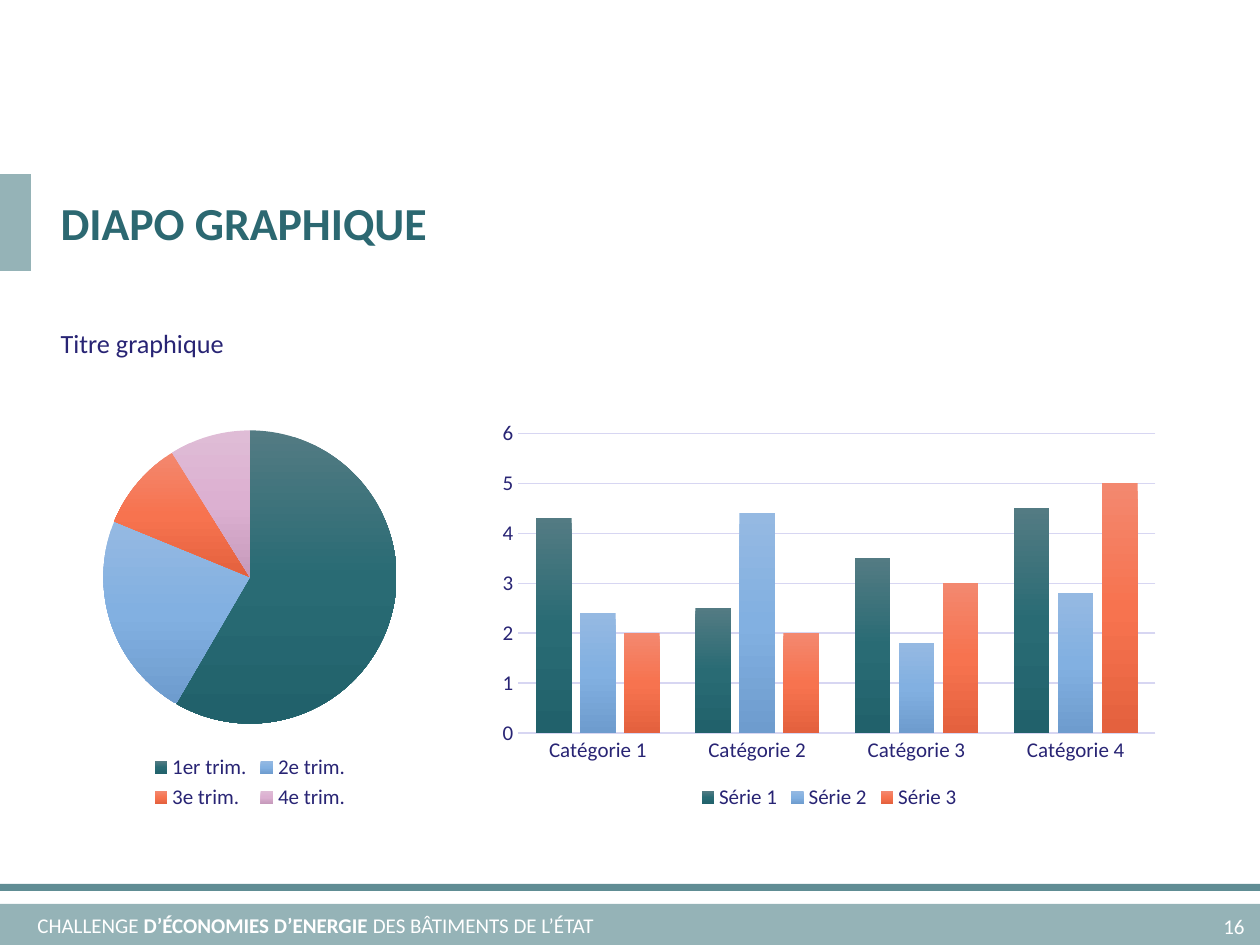
import copy
import pptx
import pptx.chart.data
import pptx.dml.color
import pptx.enum.chart
import pptx.enum.shapes
import pptx.enum.text
import pptx.oxml
import pptx.oxml.ns
import pptx.util

theme = {
    "font": "Calibri",
    "teal": "2C6871", "navy": "282474", "white": "FFFFFF", "grid": "D7D6F2",
    "title": 26.2, "body": 15, "small": 12,
    "grads": [
        ("537B83", "296B74", "21616B"),
        ("95B9E2", "82B0E1", "6E9CCE"),
        ("F3886F", "F7734F", "E4613E"),
        ("DFBCD6", "DCB0D1", "C69ABB"),
    ],
}
scale = pptx.util.Inches(1) / 126
rgb = pptx.dml.color.RGBColor.from_string
qn = pptx.oxml.ns.qn
kinds = pptx.enum.chart.XL_CHART_TYPE


def style(font, size, color, bold=False):
    font.name = theme["font"]
    font.size = pptx.util.Pt(theme[size])
    font.color.rgb = rgb(theme[color])
    font.bold = bold


def shade(form, tones):
    form.fill.gradient()
    form.fill.gradient_angle = 270
    stops = form._element.get_or_add_spPr().find(".//" + qn("a:gsLst"))
    stops.append(copy.deepcopy(stops[0]))
    for stop, tone, place in zip(form.fill.gradient_stops, tones, (0, 0.5, 1)):
        stop.color.rgb = rgb(tone)
        stop.position = place


deck = pptx.Presentation()
deck.slide_width = pptx.util.Inches(10)
deck.slide_height = pptx.util.Inches(7.5)
slide = deck.slides.add_slide(deck.slide_layouts[1])
shapes = slide.shapes

bars = [
    ((0, 904, 1260, 41), 50),
    ((0, 884, 1260, 7), 75),
    ((-1, 174, 32, 97), 50),
]
for box, alpha in bars:
    bar = shapes.add_shape(pptx.enum.shapes.MSO_SHAPE.RECTANGLE,
                           *[round(n * scale) for n in box])
    bar.shadow.inherit = False
    bar.line.fill.background()
    bar.fill.solid()
    bar.fill.fore_color.rgb = rgb(theme["teal"])
    tint = bar.fill._xPr.find(".//" + qn("a:srgbClr"))
    tint.append(pptx.oxml.parse_xml(
        f'<a:alpha {pptx.oxml.ns.nsdecls("a")} val="{alpha * 1000}"/>'))

title, body = shapes.title, slide.placeholders[1]
foot, page = [shapes.add_textbox(0, 0, 0, 0) for _ in range(2)]
top = pptx.enum.text.MSO_ANCHOR.TOP
texts = [
    (title, (48, 188, 1123, 68), "title", "teal", pptx.enum.text.MSO_ANCHOR.MIDDLE,
     [("DIAPO GRAPHIQUE", True)]),
    (body, (48, 321, 1123, 72), "body", "navy", top, [("Titre graphique", False)]),
    (foot, (25, 906, 1181, 38), "small", "white", top,
     [("CHALLENGE ", False), ("D’ÉCONOMIES D’ENERGIE ", True),
      ("DES BÂTIMENTS DE L’ÉTAT", False)]),
    (page, (1211, 907, 49, 38), "small", "white", top, [("16", False)]),
]
for shape, box, size, color, anchor, runs in texts:
    shape.left, shape.top, shape.width, shape.height = [round(n * scale) for n in box]
    frame = shape.text_frame
    frame.auto_size = pptx.enum.text.MSO_AUTO_SIZE.NONE
    frame.word_wrap = shape is not page
    frame.vertical_anchor = anchor
    para = frame.paragraphs[0]
    para.alignment = pptx.enum.text.PP_ALIGN.LEFT
    para.space_before = pptx.util.Pt(0)
    for words, bold in runs:
        run = para.add_run()
        run.text = words
        style(run.font, size, color, bold)

props = body.text_frame.paragraphs[0]._p.get_or_add_pPr()
props.set("marL", "0")
props.set("indent", "0")
props.append(pptx.oxml.parse_xml(f'<a:buNone {pptx.oxml.ns.nsdecls("a")}/>'))

plans = [
    (kinds.PIE, (53, 413, 394, 402),
     ["1er trim.", "2e trim.", "3e trim.", "4e trim."],
     [("Series 1", (59, 23, 10, 9))]),
    (kinds.COLUMN_CLUSTERED, (489, 413, 680, 402),
     [f"Catégorie {n}" for n in range(1, 5)],
     [("Série 1", (4.3, 2.5, 3.5, 4.5)),
      ("Série 2", (2.4, 4.4, 1.8, 2.8)),
      ("Série 3", (2, 2, 3, 5))]),
]
charts = []
for kind, box, cats, rows in plans:
    data = pptx.chart.data.CategoryChartData()
    data.categories = cats
    for name, vals in rows:
        data.add_series(name, vals)
    chart = shapes.add_chart(kind, *[round(n * scale) for n in box], data).chart
    chart.has_title = False
    style(chart.font, "small", "navy")
    chart.has_legend = True
    chart.legend.position = pptx.enum.chart.XL_LEGEND_POSITION.BOTTOM
    chart.legend.include_in_layout = False
    style(chart.legend.font, "small", "navy")
    charts.append(chart)

pie, cols = [chart.plots[0] for chart in charts]
pie.vary_by_categories = True
for spot, tones in enumerate(theme["grads"]):
    shade(pie.series[0].points[spot].format, tones)

cols.vary_by_categories = False
cols.gap_width = 100
cols.overlap = -24
for row, tones in zip(cols.series, theme["grads"]):
    row.invert_if_negative = False
    shade(row.format, tones)

cat, val = charts[1].category_axis, charts[1].value_axis
for axis in (cat, val):
    axis.major_tick_mark = pptx.enum.chart.XL_TICK_MARK.NONE
    style(axis.tick_labels.font, "small", "navy")
val.minimum_scale, val.maximum_scale, val.major_unit = 0, 6, 1
val.format.line.fill.background()
for line in (cat.format.line, val.major_gridlines.format.line):
    line.color.rgb = rgb(theme["grid"])
    line.width = pptx.util.Pt(0.75)

deck.save("out.pptx")
